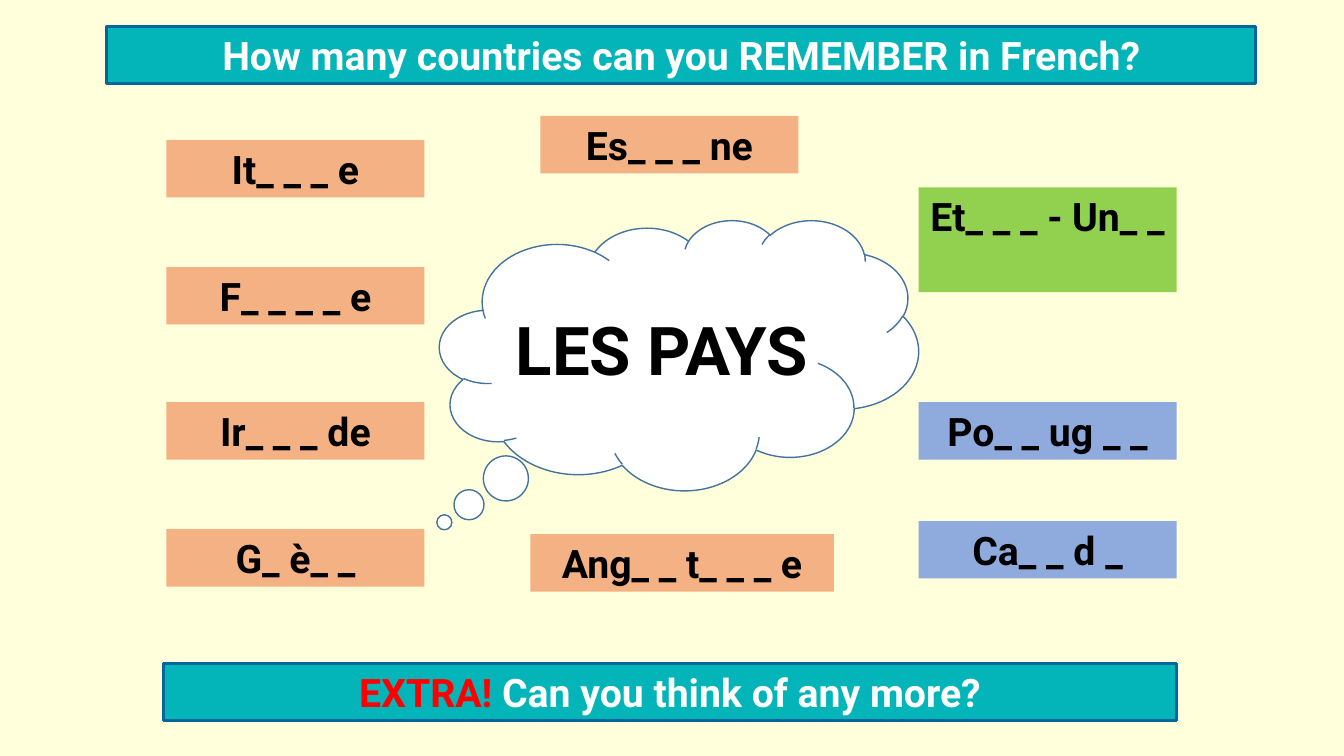
from dataclasses import dataclass

from pptx import Presentation
from pptx.dml.color import RGBColor
from pptx.enum.shapes import MSO_SHAPE
from pptx.enum.text import MSO_ANCHOR, PP_ALIGN
from pptx.util import Inches, Pt

RECT, CLOUD = MSO_SHAPE.RECTANGLE, MSO_SHAPE.CLOUD_CALLOUT
TOP, MIDDLE = MSO_ANCHOR.TOP, MSO_ANCHOR.MIDDLE
CENTER = PP_ALIGN.CENTER

FONT = "Roboto"
COLORS = {
    "cream": "FFFFDB", "white": "FFFFFF", "black": "000000", "red": "FF0000",
    "teal": "03B5B9", "navy": "006699", "blue": "43739E",
    "orange": "F4B183", "periwinkle": "8FAADC", "green": "92D050",
}

# Positions and sizes are percentages of the slide's width and height
LEFT_COL, RIGHT_COL = 12.38, 68.34
CARD_W, ROW_H = 19.2, 7.6


@dataclass
class Box:
    runs: list[tuple[str, str]]  # text and colour name
    x: float
    y: float
    w: float = CARD_W
    h: float = ROW_H
    fill: str = "orange"
    line: str | None = None
    line_pt: float = 1
    size: int = 28
    kind: MSO_SHAPE = RECT
    anchor: MSO_ANCHOR = TOP
    adjustments: tuple[float, ...] = ()


def card(text: str, x: float, y: float, **style) -> Box:
    return Box([(text, "black")], x, y, **style)


def banner(runs: list[tuple[str, str]], x: float, y: float, w: float) -> Box:
    return Box(runs, x, y, w, fill="teal", line="navy", line_pt=2.25)


BOXES = [
    # Central thought cloud
    card("LES PAYS", 32.71, 29.07, w=35.63, h=35.73, fill="white", line="blue",
         size=48, kind=CLOUD, anchor=MIDDLE, adjustments=(-0.49, 0.62)),
    # Question banners
    banner([("How many countries can you REMEMBER in French?", "white")],
           7.95, 3.47, 85.45),
    banner([("EXTRA! ", "red"), ("Can you think of any more?", "white")],
           12.15, 87.73, 75.39),
    # Left column
    card("It_ _ _ e", LEFT_COL, 18.53),
    card("F_ _ _ _ e", LEFT_COL, 35.33),
    card("Ir_ _ _ de", LEFT_COL, 53.2),
    card("G_ è_ _", LEFT_COL, 70),
    # Above and below the cloud
    card("Es_ _ _ ne", 40.21, 15.33),
    card("Ang_ _ t_ _ _ e", 39.46, 70.67, w=22.58),
    # Right column
    card("Et_ _ _ - Un_ _", RIGHT_COL, 24.8, h=13.87, fill="green"),
    card("Po_ _ ug _ _", RIGHT_COL, 53.2, fill="periwinkle"),
    card("Ca_ _ d _", RIGHT_COL, 68.93, fill="periwinkle"),
]


def rgb(name: str) -> RGBColor:
    return RGBColor.from_string(COLORS[name])


def draw_box(prs, s, box: Box) -> None:
    sw, sh = prs.slide_width / 100, prs.slide_height / 100
    sp = s.shapes.add_shape(box.kind, round(box.x * sw), round(box.y * sh),
                            round(box.w * sw), round(box.h * sh))
    for i, value in enumerate(box.adjustments):
        sp.adjustments[i] = value
    sp.shadow.inherit = False
    sp.fill.solid()
    sp.fill.fore_color.rgb = rgb(box.fill)
    if box.line:
        sp.line.color.rgb = rgb(box.line)
        sp.line.width = Pt(box.line_pt)
    else:
        sp.line.fill.background()

    tf = sp.text_frame
    tf.word_wrap = True
    tf.vertical_anchor = box.anchor
    p = tf.paragraphs[0]
    p.alignment = CENTER
    p.font.name, p.font.size, p.font.bold = FONT, Pt(box.size), True
    for text, color in box.runs:
        r = p.add_run()
        r.text = text
        r.font.color.rgb = rgb(color)


def main() -> None:
    prs = Presentation()
    prs.slide_width, prs.slide_height = Inches(13.33), Inches(7.5)
    s = prs.slides.add_slide(prs.slide_layouts[6])
    s.background.fill.solid()
    s.background.fill.fore_color.rgb = rgb("cream")
    for box in BOXES:
        draw_box(prs, s, box)
    prs.save("out.pptx")


if __name__ == "__main__":
    main()
